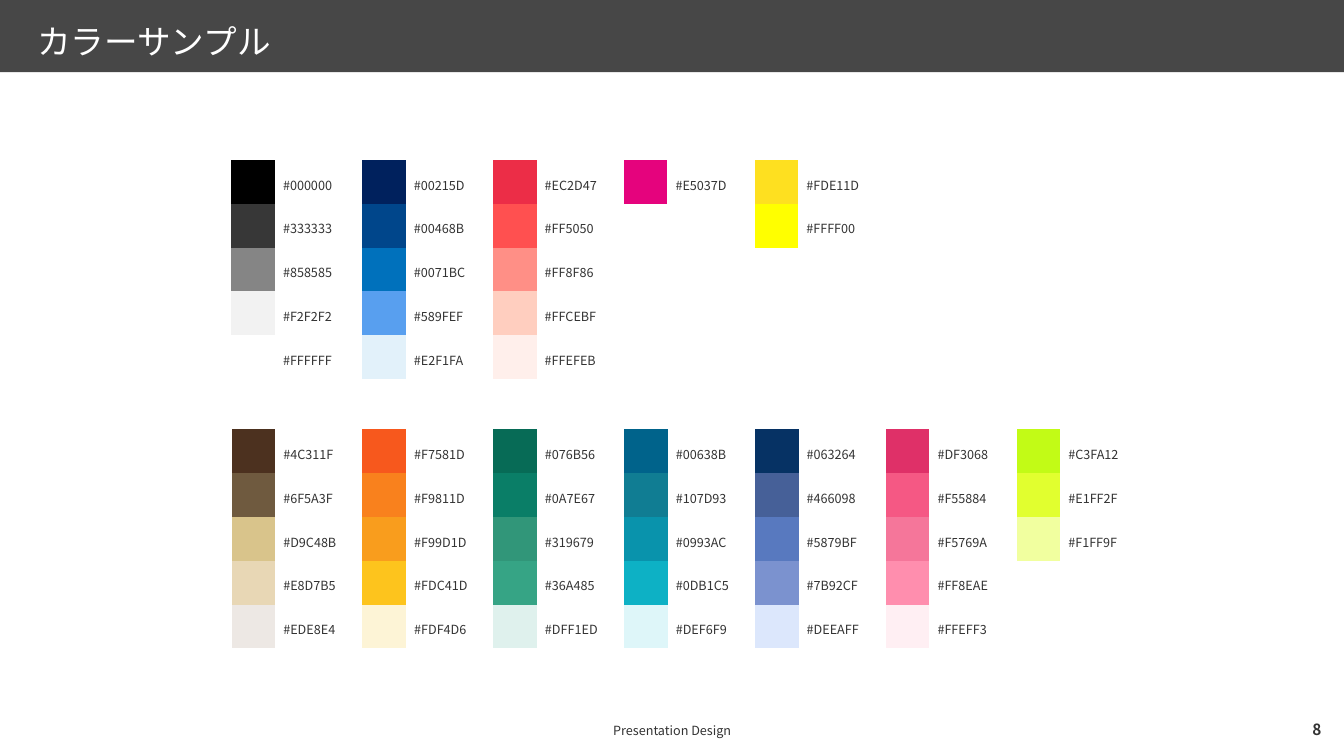
from lxml import etree
from pptx import Presentation
from pptx import util as u
from pptx.dml import color
from pptx.enum import shapes, text
from pptx.oxml import ns

COLORS = {"ink": "333333", "white": "FFFFFF"}
NO_STYLE_NO_GRID = "{2D5ABB26-0587-4C30-8999-92F81FD0307C}"
ROW_COUNT = 5

BASIC_PALETTE = [
    "000000 333333 858585 F2F2F2 FFFFFF",
    "00215D 00468B 0071BC 589FEF E2F1FA",
    "EC2D47 FF5050 FF8F86 FFCEBF FFEFEB",
    "E5037D",
    "FDE11D FFFF00",
]
ACCENT_PALETTE = [
    "4C311F 6F5A3F D9C48B E8D7B5 EDE8E4",
    "F7581D F9811D F99D1D FDC41D FDF4D6",
    "076B56 0A7E67 319679 36A485 DFF1ED",
    "00638B 107D93 0993AC 0DB1C5 DEF6F9",
    "063264 466098 5879BF 7B92CF DEEAFF",
    "DF3068 F55884 F5769A FF8EAE FFEFF3",
    "C3FA12 E1FF2F F1FF9F",
]
ADJUSTED_FILLS = {
    "333333": "373737",
    "FDE11D": "FEE020",
    "DEEAFF": "DCE7FC",
    "C3FA12": "C2FB16",
}


class SlideBuilder:
    """Draws styled elements on one slide."""

    font = "Noto Sans CJK JP"
    swatch_width = 31.2
    label_width = 62.3
    row_height = 31.3

    def __init__(self, page):
        self.page = page

    def style(self, para, size, ink="ink", bold=False):
        for span in para.runs:
            span.font.name = self.font
            span.font.size = u.Pt(size)
            span.font.bold = bold
            span.font.color.rgb = color.RGBColor.from_string(COLORS[ink])
            east_asian = etree.SubElement(span._r.get_or_add_rPr(), ns.qn("a:ea"))
            east_asian.set("typeface", self.font)

    def band(self, left, top, width, height, fill, opacity):
        band = self.page.shapes.add_shape(
            shapes.MSO_SHAPE.RECTANGLE, *map(u.Pt, (left, top, width, height)))
        band.shadow.inherit = False
        band.line.fill.background()
        band.fill.solid()
        band.fill.fore_color.rgb = color.RGBColor.from_string(COLORS[fill])
        fill_color = next(band._element.spPr.iter(ns.qn("a:srgbClr")))
        etree.SubElement(fill_color, ns.qn("a:alpha")).set("val", str(opacity * 1000))

    def label(self, words, left, top, width, height, size, align,
              ink="ink", bold=False, spacing=1.0):
        box = self.page.shapes.add_textbox(*map(u.Pt, (left, top, width, height)))
        frame = box.text_frame
        frame.word_wrap = True
        frame.vertical_anchor = text.MSO_ANCHOR.MIDDLE
        frame.margin_left = frame.margin_right = 0
        frame.margin_top = frame.margin_bottom = 0
        frame.text = words
        para = frame.paragraphs[0]
        para.alignment = align
        para.line_spacing = spacing
        self.style(para, size, ink, bold)

    def blank_cell(self, cell):
        cell.fill.background()
        cell.margin_top = cell.margin_bottom = 0
        cell.text_frame.paragraphs[0].font.size = u.Pt(9)

    def code_cell(self, cell, code):
        cell.margin_left = cell.margin_right = u.Pt(5.8)
        cell.margin_top, cell.margin_bottom = u.Pt(8.4), u.Pt(7.2)
        cell.vertical_anchor = text.MSO_ANCHOR.MIDDLE
        cell.text_frame.text = f"#{code}"
        para = cell.text_frame.paragraphs[0]
        para.line_spacing = 1.2
        para.space_after = u.Pt(3)
        self.style(para, 9)

    def palette(self, columns, left, top):
        width = len(columns) * (self.swatch_width + self.label_width)
        height = ROW_COUNT * self.row_height
        holder = self.page.shapes.add_table(
            ROW_COUNT, 2 * len(columns), *map(u.Pt, (left, top, width, height)))
        next(holder._element.iter(ns.qn("a:tableStyleId"))).text = NO_STYLE_NO_GRID
        table = holder.table
        table.first_row = table.horz_banding = False
        for row in table.rows:
            row.height = u.Pt(self.row_height)
        for cell in table.iter_cells():
            self.blank_cell(cell)
        for index, codes in enumerate(columns):
            table.columns[2 * index].width = u.Pt(self.swatch_width)
            table.columns[2 * index + 1].width = u.Pt(self.label_width)
            for row_index, code in enumerate(codes.split()):
                swatch = table.cell(row_index, 2 * index)
                swatch.fill.solid()
                swatch.fill.fore_color.rgb = color.RGBColor.from_string(
                    ADJUSTED_FILLS.get(code, code))
                self.code_cell(table.cell(row_index, 2 * index + 1), code)


def main():
    deck = Presentation()
    deck.slide_width, deck.slide_height = u.Pt(960), u.Pt(540)
    builder = SlideBuilder(deck.slides.add_slide(deck.slide_layouts[6]))
    align = text.PP_ALIGN
    builder.band(0, 0, 960, 51.6, "ink", 90)
    builder.label("カラーサンプル", 26.6, 12.2, 907, 31, 24, align.LEFT,
                  ink="white", spacing=1.1)
    builder.label("Presentation Design", 69, 511.2, 822.2, 20.9, 9, align.CENTER)
    builder.label("8", 907.9, 511.2, 36, 20.2, 11, align.RIGHT, bold=True)
    builder.palette(ACCENT_PALETTE, 165.4, 306.7)
    builder.palette(BASIC_PALETTE, 165.2, 114.3)
    deck.save("out.pptx")


if __name__ == "__main__":
    main()
